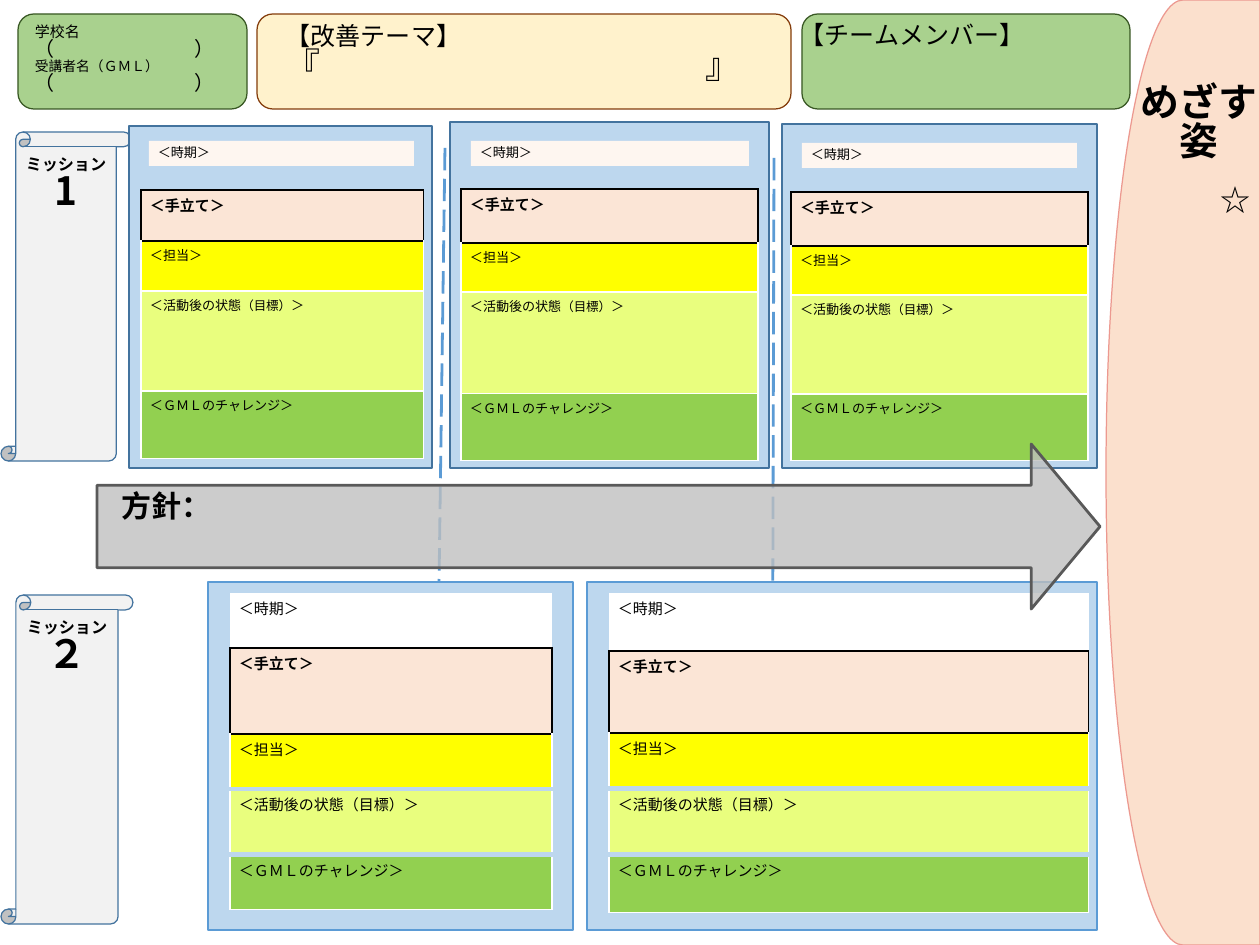
from lxml import etree
from pptx import Presentation
from pptx import util as u
from pptx.dml.color import RGBColor
from pptx.enum import dml, shapes, text
from pptx.oxml.ns import qn

PX = 10160  # 90 px to the inch
FONT = "Noto Sans CJK JP"
TIGHT = 0.84
NO_STYLE = "{2D5ABB26-0587-4C30-8999-92F81FD0307C}"
PALE_BLUE, BLUE, DARK_BLUE = "BDD7EE", "5B9BD5", "43739E"
GREEN, DARK_GREEN = "A9D18E", "385723"
PEACH, YELLOW, LIME, LEAF = "FBE5D6", "FFFF00", "E9FE7E", "92D050"
SHAPE = shapes.MSO_SHAPE

BLACK_LINE, WHITE_LINE, GAP_LINE = ("000000", 1), ("FFFFFF", 1), (PALE_BLUE, 4.5)


def color(value):
    return RGBColor.from_string(value)


def box(*lengths):
    return [u.Emu(n * PX) for n in lengths]


def sides(left, top, right, bottom):
    return {"L": left, "R": right, "T": top, "B": bottom}


def write(tf, paragraphs, spacing=TIGHT, align=None, tab=None):
    """Each paragraph is a list of runs: (text, size, bold)."""
    tf.word_wrap = True
    for i, runs in enumerate(paragraphs):
        p = tf.paragraphs[0] if i == 0 else tf.add_paragraph()
        p.alignment = align or text.PP_ALIGN.LEFT
        p.line_spacing = spacing
        if tab and any("\t" in run[0] for run in runs):
            tabs = etree.SubElement(p._p.get_or_add_pPr(), qn("a:tabLst"))
            etree.SubElement(tabs, qn("a:tab"), pos=str(tab * PX), algn="l")
        for words, size, bold in runs:
            r = p.add_run()
            r.text = words
            for name, value in {"size": u.Pt(size), "bold": bold, "name": FONT}.items():
                setattr(r.font, name, value)
            r.font.color.rgb = color("000000")
            etree.SubElement(r._r.get_or_add_rPr(), qn("a:ea"), typeface=FONT)


def add_text(s, at, paragraphs, **options):
    sp = s.shapes.add_textbox(*box(*at))
    write(sp.text_frame, paragraphs, **options)
    return sp


def add_block(s, kind, at, fill, line=None, width=1, adjust=()):
    sp = s.shapes.add_shape(kind, *box(*at))
    sp.shadow.inherit = False
    sp.fill.solid()
    sp.fill.fore_color.rgb = color(fill)
    if line:
        sp.line.color.rgb = color(line)
        sp.line.width = u.Pt(width)
    else:
        sp.line.fill.background()
    for i, value in enumerate(adjust):
        sp.adjustments[i] = value
    return sp


def add_divider(s, x1, y1, x2, y2):
    line = s.shapes.add_connector(shapes.MSO_CONNECTOR.STRAIGHT, *box(x1, y1, x2, y2))
    line.line.color.rgb = color(BLUE)
    line.line.width = u.Pt(2.25)
    line.line.dash_style = dml.MSO_LINE.LONG_DASH
    etree.SubElement(line._element.spPr, qn("a:effectLst"))


def set_borders(cell, borders):
    tcPr = cell._tc.get_or_add_tcPr()
    for side in "LRTB":
        line = borders.get(side)
        ln = etree.SubElement(tcPr, qn("a:ln" + side))
        if line:
            ln.set("w", str(u.Pt(line[1])))
            fill = etree.SubElement(ln, qn("a:solidFill"))
            etree.SubElement(fill, qn("a:srgbClr"), val=line[0])
        else:
            etree.SubElement(ln, qn("a:noFill"))


def add_plan_table(s, x, y, width, heights, rows):
    """Each row is (runs, fill, borders)."""
    frame = s.shapes.add_table(len(rows), 1, *box(x, y, width, sum(heights)))
    table = frame.table
    table.first_row = table.horz_banding = False
    table._tbl.tblPr.find(qn("a:tableStyleId")).text = NO_STYLE
    for i, (height, (runs, fill, borders)) in enumerate(zip(heights, rows)):
        table.rows[i].height = u.Emu(height * PX)
        cell = table.cell(i, 0)
        set_borders(cell, borders)
        cell.fill.solid()
        cell.fill.fore_color.rgb = color(fill)
        write(cell.text_frame, [runs], spacing=1.0)


def add_mission(s, y, width, number):
    add_block(s, SHAPE.VERTICAL_SCROLL, (1, y, width, 329), "F2F2F2", DARK_BLUE, adjust=[0.113])
    add_text(s, (7, y + 21, width - 12, 76),
             [[("ミッション", 12.9, True), (number, 31.1, True)]],
             align=text.PP_ALIGN.CENTER)


def add_header(s):
    add_block(s, SHAPE.ROUNDED_RECTANGLE, (257, 14, 534, 95), "FFF2CC", "843C0B")
    add_text(s, (277, 21, 495, 82),
             [[("【改善テーマ】", 20, False)], [("『\t』", 28, False)]], tab=420)
    add_block(s, SHAPE.ROUNDED_RECTANGLE, (802, 14, 328, 95), GREEN, DARK_GREEN)
    add_text(s, (791, 20, 325, 41), [[("【チームメンバー】", 20, False)]])
    add_block(s, SHAPE.ROUNDED_RECTANGLE, (18, 14, 229, 95), GREEN, DARK_GREEN)
    blank = [("（\t）", 16, False)]
    add_text(s, (26, 21, 219, 93),
             [[("学校名", 12, False)], blank, [("受講者名（ＧＭＬ）", 11, False)], blank],
             tab=160)


def add_goal(s):
    sp = add_block(s, SHAPE.FLOWCHART_DELAY, (1106, 0, 154, 945), "FBE0CD", "EC9990")
    sp.rotation = 180
    add_text(s, (1131, 81, 136, 104), [[("めざす姿", 31, True)]], align=text.PP_ALIGN.CENTER)
    star = add_text(s, (1196, 176, 55, 708), [[("☆", 24, False)]])
    star.text_frame._txBody.bodyPr.set("vert", "eaVert")


def add_mission_one(s):
    plain = sides(*[WHITE_LINE] * 4)
    rows = [
        ([("＜手立て＞", 12, True)], PEACH, sides(*[BLACK_LINE] * 4)),
        ([("＜担当＞", 10.5, False)], YELLOW, {**plain, "T": BLACK_LINE}),
        ([("＜活動後の状態", 10.5, False), ("（目標）", 10, False), ("＞", 10.5, False)],
         LIME, plain),
        ([("＜ＧＭＬのチャレンジ＞", 10.5, False)], LEAF, plain),
    ]
    # panel, period strip, then table x, y, width and row heights
    for panel, strip, table, heights in [
        ((129, 126, 303, 342), (149, 141, 265, 25), (141, 190, 283), (51, 50, 100, 68)),
        ((450, 122, 319, 346), (471, 141, 278, 25), (461, 189, 297), (54, 49, 102, 67)),
        ((782, 124, 315, 344), (802, 143, 275, 25), (791, 192, 297), (54, 49, 99, 67)),
    ]:
        add_block(s, SHAPE.RECTANGLE, panel, PALE_BLUE, DARK_BLUE)
        period = add_block(s, SHAPE.RECTANGLE, strip, "FEF6F0")
        write(period.text_frame, [[("＜時期＞", 10.5, False)]])
        add_plan_table(s, *table, heights, rows)


def add_mission_two(s):
    rows = [
        ([("＜時期＞", 12, False)], "FFFFFF", {"B": BLACK_LINE}),
        ([("＜手立て＞", 12, True)], PEACH, sides(*[BLACK_LINE] * 4)),
        ([("＜担当＞", 12, False)], YELLOW, sides(WHITE_LINE, BLACK_LINE, WHITE_LINE, GAP_LINE)),
        ([("＜活動後の状態（目標）＞", 12, False)], LIME,
         sides(WHITE_LINE, GAP_LINE, WHITE_LINE, GAP_LINE)),
        ([("＜ＧＭＬのチャレンジ＞", 12, False)], LEAF,
         sides(WHITE_LINE, GAP_LINE, WHITE_LINE, WHITE_LINE)),
    ]
    for x, panel_width, table_width, heights in [
        (208, 365, 322, (55, 86, 55, 66, 55)),
        (587, 510, 480, (58, 82, 56, 66, 58)),
    ]:
        add_block(s, SHAPE.RECTANGLE, (x, 582, panel_width, 348), PALE_BLUE, BLUE)
        add_plan_table(s, x + 22, 593, table_width, heights, rows)


def add_policy_arrow(s):
    arrow = add_block(s, SHAPE.RIGHT_ARROW, (97, 444, 1003, 165), "BFBFBF", "595959", 2.25,
                      [0.5, 0.417])
    fill = arrow._element.spPr.find(qn("a:solidFill"))
    etree.SubElement(fill[0], qn("a:alpha"), val="79000")
    add_text(s, (113, 489, 960, 45), [[("方針：", 24, True)]])


def main():
    prs = Presentation()
    prs.slide_width, prs.slide_height = box(1260, 945)
    s = prs.slides.add_slide(prs.slide_layouts[6])

    # Dashed dividers behind everything
    add_divider(s, 774, 158, 772, 885)
    add_divider(s, 445, 148, 435, 879)

    # Header boxes and the goal on the right
    add_header(s)
    add_goal(s)

    # Two missions with their plans
    add_mission(s, 132, 130, "1")
    add_mission(s, 595, 132, "２")
    add_mission_one(s)
    add_mission_two(s)

    # Policy arrow on top
    add_policy_arrow(s)
    prs.save("out.pptx")


if __name__ == "__main__":
    main()
